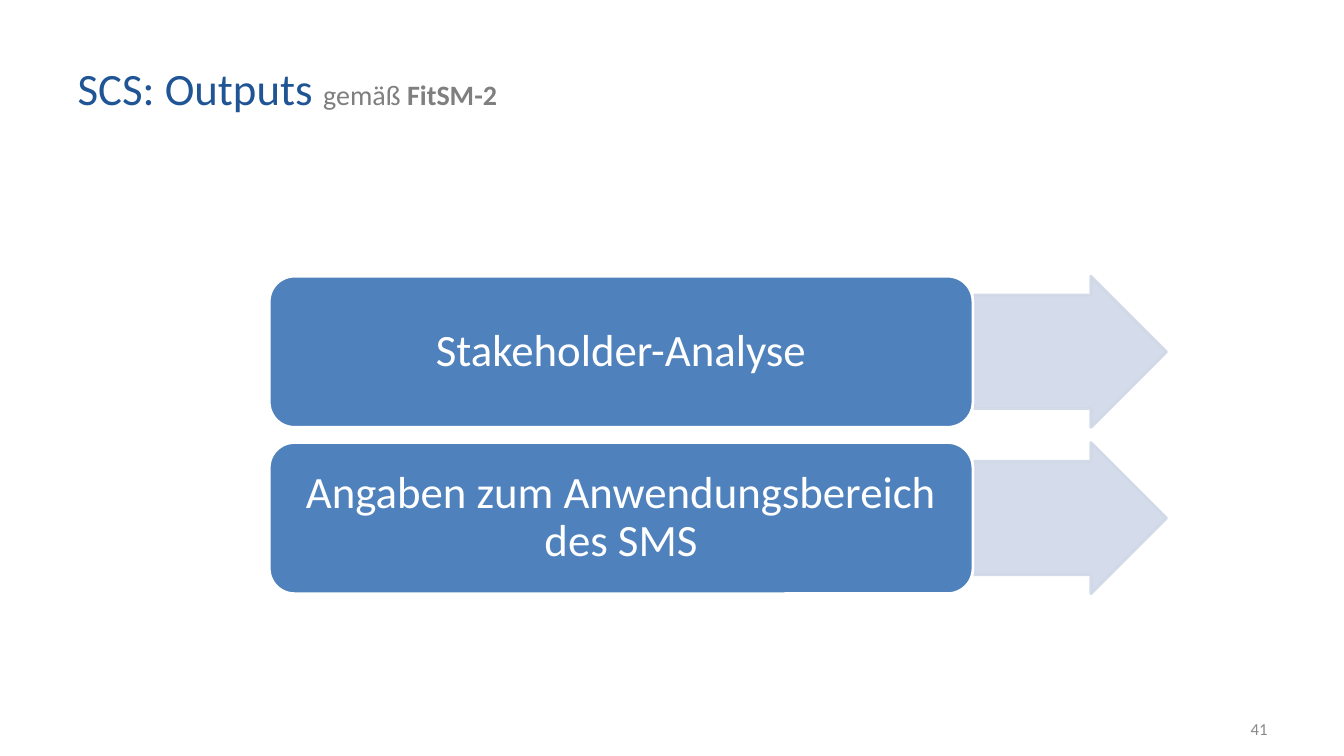
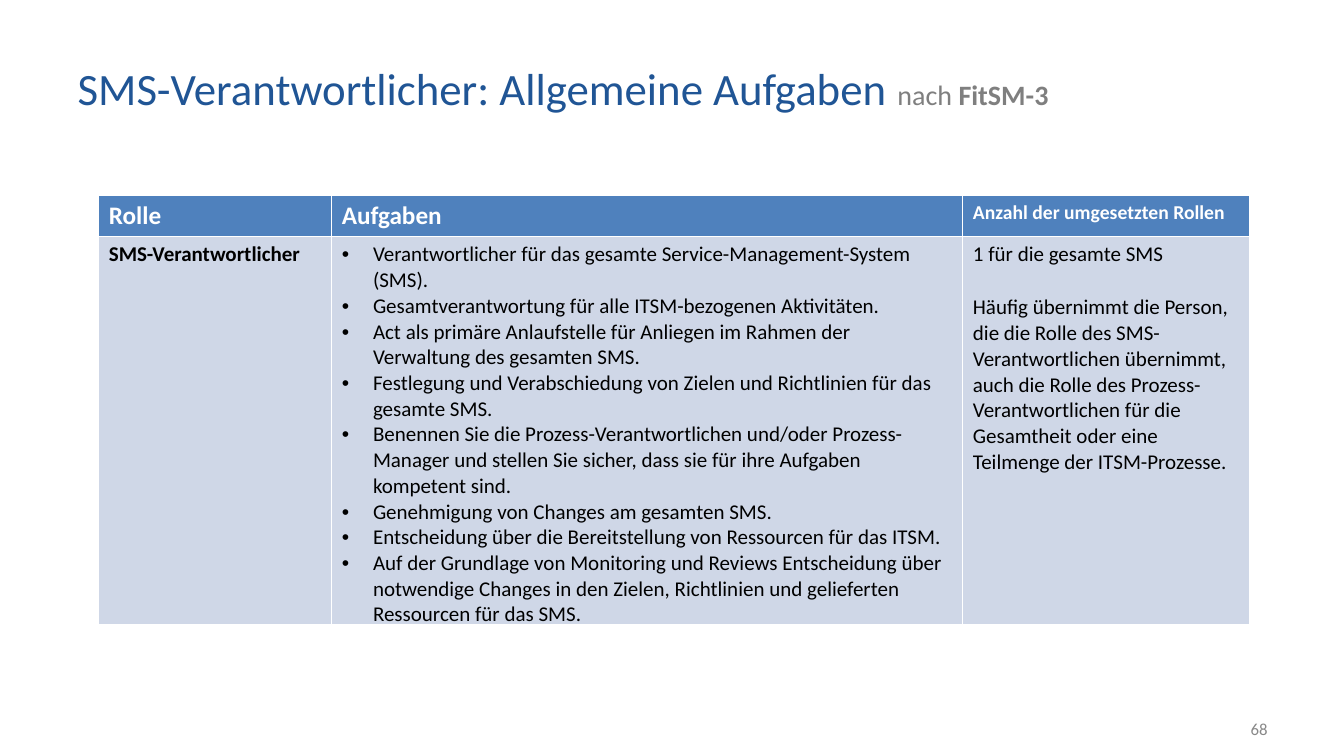
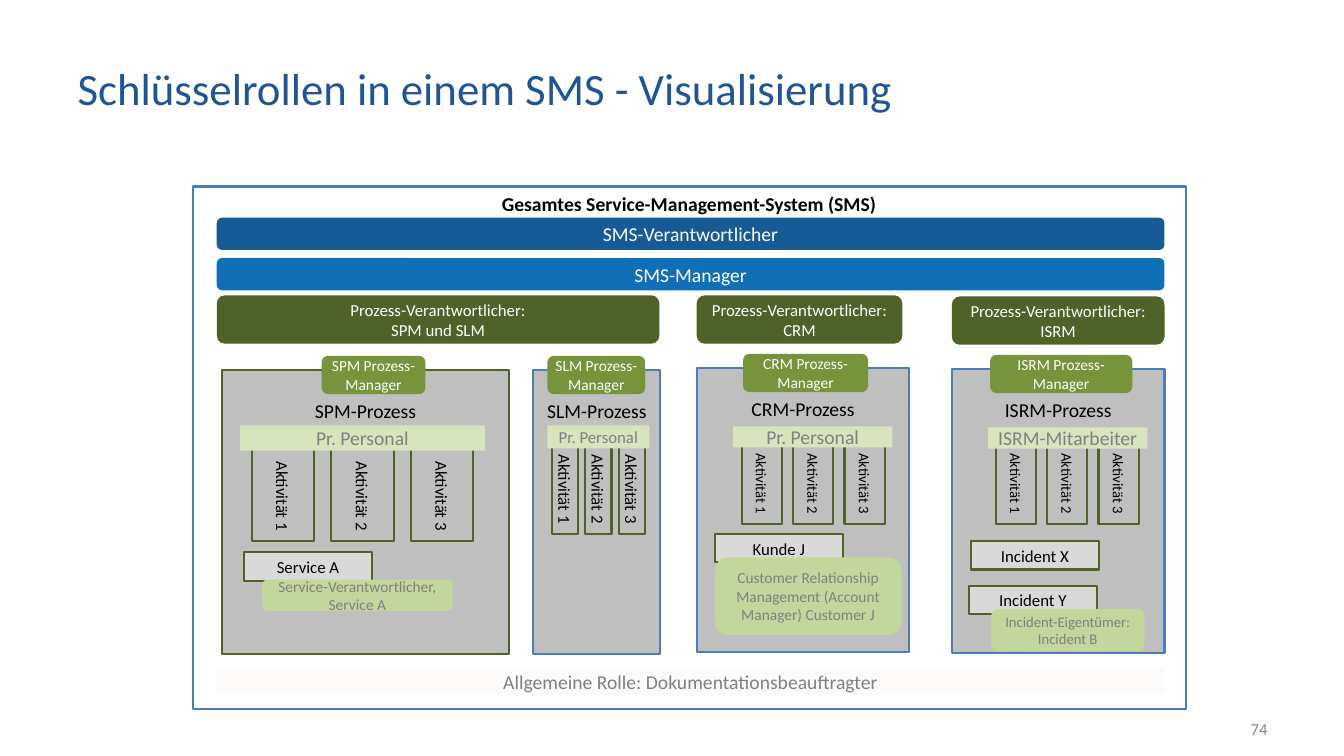
from dataclasses import dataclass, replace
from typing import NamedTuple, Optional, Union

from lxml.etree import SubElement
from pptx import Presentation
from pptx.dml.color import RGBColor
from pptx.enum.shapes import MSO_SHAPE as Preset
from pptx.enum.text import MSO_ANCHOR as Anchor, PP_ALIGN as Align
from pptx.oxml.ns import qn
from pptx.shapes.autoshape import Shape
from pptx.shapes.shapetree import GroupShapes, SlideShapes
from pptx.slide import Slide
from pptx.table import _Cell as Cell
from pptx.text.text import TextFrame, _Paragraph as Paragraph
from pptx.util import Inches, Pt

Shapes = Union[SlideShapes, GroupShapes]

FONT = "Calibri"
WHITE = RGBColor(0xFF, 0xFF, 0xFF)
BLACK = RGBColor(0x00, 0x00, 0x00)
TITLE_BLUE = RGBColor(0x20, 0x55, 0x95)
SUBTITLE_GRAY = RGBColor(0x7F, 0x7F, 0x7F)
NUMBER_GRAY = RGBColor(0x88, 0x88, 0x88)
ROLE_GRAY = RGBColor(0x80, 0x80, 0x80)
ACCENT_BLUE = RGBColor(0x4F, 0x81, 0xBD)
EDGE_BLUE = RGBColor(0x4A, 0x7D, 0xBA)
ARROW_FILL = RGBColor(0xD0, 0xD8, 0xE8)
ARROW_EDGE = RGBColor(0xD0, 0xD8, 0xE7)
ROW_BLUE = RGBColor(0xCF, 0xD7, 0xE7)
OWNER_BLUE = RGBColor(0x16, 0x5B, 0x95)
MANAGER_BLUE = RGBColor(0x0F, 0x70, 0xB7)
DARK_GREEN = RGBColor(0x4F, 0x62, 0x28)
MID_GREEN = RGBColor(0x77, 0x93, 0x3C)
SOFT_GREEN = RGBColor(0xC3, 0xD6, 0x9B)
PALE_GREEN = RGBColor(0xD7, 0xE4, 0xBD)
PROCESS_GRAY = RGBColor(0xBF, 0xBF, 0xBF)
ITEM_GRAY = RGBColor(0xD9, 0xD9, 0xD9)
GENERAL_WHITE = RGBColor(0xFC, 0xFB, 0xF9)


class Span(NamedTuple):
    text: str
    size: float
    color: RGBColor
    bold: bool = False


class Area(NamedTuple):
    left: float
    top: float
    width: float
    height: float


class Insets(NamedTuple):
    left: float = 0.1
    top: float = 0.05
    right: float = 0.1
    bottom: float = 0.05


@dataclass(frozen=True)
class Style:
    size: float
    color: RGBColor
    fill: Optional[RGBColor] = None
    edge: Optional[RGBColor] = None
    edge_width: float = 1.5
    preset: Preset = Preset.RECTANGLE
    bold: bool = False
    align: Align = Align.CENTER
    anchor: Anchor = Anchor.MIDDLE
    insets: Insets = Insets()
    line_spacing: float = 1.0


@dataclass(frozen=True)
class Label:
    area: Area
    style: Style
    lines: tuple[str, ...]


@dataclass(frozen=True)
class Activities:
    left: float
    top: float
    length: float
    thickness: float
    step: float
    size: float


@dataclass(frozen=True)
class Process:
    name: str
    left: float
    top: float
    width: float
    manager_left: float
    manager_width: float
    staff: Label
    activities: Activities
    edge: RGBColor = EDGE_BLUE


ROUNDED = Preset.ROUNDED_RECTANGLE
OUTPUT = Style(32, WHITE, ACCENT_BLUE, WHITE, 2, ROUNDED,
               insets=Insets(0.12, 0.06, 0.12, 0.06), line_spacing=0.9)
ARROW = Style(32, BLACK, ARROW_FILL, ARROW_EDGE, 2, Preset.RIGHT_ARROW)
SYSTEM = Style(14, BLACK, edge=EDGE_BLUE, bold=True, anchor=Anchor.TOP)
SMS_OWNER = Style(14, WHITE, OWNER_BLUE, preset=ROUNDED)
SMS_MANAGER = replace(SMS_OWNER, fill=MANAGER_BLUE)
GENERAL = Style(14, ROLE_GRAY, GENERAL_WHITE, preset=ROUNDED)
OWNER = Style(12, WHITE, DARK_GREEN, preset=ROUNDED)
MANAGER = Style(11, WHITE, MID_GREEN, preset=ROUNDED, insets=Insets(0.04, 0.05, 0.04, 0.05))
PROCESS = Style(14, BLACK, PROCESS_GRAY, anchor=Anchor.TOP, insets=Insets(top=0.29))
STAFF = Style(14, ROLE_GRAY, PALE_GREEN)
ACTIVITY = Style(12, BLACK, edge=DARK_GREEN, align=Align.RIGHT, insets=Insets(left=0))
ITEM = Style(12, BLACK, ITEM_GRAY, DARK_GREEN)
ITEM_ROLE = Style(11, ROLE_GRAY, SOFT_GREEN, preset=ROUNDED)

OUTPUTS = ("Stakeholder-Analyse", "Angaben zum Anwendungsbereich des SMS")
TASKS = (
    "Verantwortlicher für das gesamte Service-Management-System (SMS).",
    "Gesamtverantwortung für alle ITSM-bezogenen Aktivitäten.",
    "Act als primäre Anlaufstelle für Anliegen im Rahmen der Verwaltung des gesamten SMS.",
    "Festlegung und Verabschiedung von Zielen und Richtlinien für das gesamte SMS.",
    "Benennen Sie die Prozess-Verantwortlichen und/oder Prozess-Manager und stellen Sie sicher, "
    "dass sie für ihre Aufgaben kompetent sind.",
    "Genehmigung von Changes am gesamten SMS.",
    "Entscheidung über die Bereitstellung von Ressourcen für das ITSM.",
    "Auf der Grundlage von Monitoring und Reviews Entscheidung über notwendige Changes in den "
    "Zielen, Richtlinien und gelieferten Ressourcen für das SMS.",
)
ROLE_COUNTS = (
    "1 für die gesamte SMS",
    "Häufig übernimmt die Person, die die Rolle des SMS-Verantwortlichen übernimmt, auch die "
    "Rolle des Prozess-Verantwortlichen für die Gesamtheit oder eine Teilmenge der ITSM-Prozesse.",
)
OWNER_LINE = "Prozess-Verantwortlicher:"
SYSTEM_LABELS = (
    Label(Area(1.91, 1.85, 9.85, 5.18), SYSTEM, ("Gesamtes Service-Management-System (SMS)",)),
    Label(Area(2.15, 2.16, 9.4, 0.32), SMS_OWNER, ("SMS-Verantwortlicher",)),
    Label(Area(2.15, 2.56, 9.4, 0.32), SMS_MANAGER, ("SMS-Manager",)),
    Label(Area(2.15, 2.93, 4.39, 0.48), OWNER, (OWNER_LINE, "SPM und SLM")),
    Label(Area(6.91, 2.93, 2.04, 0.48), OWNER, (OWNER_LINE, "CRM")),
    Label(Area(9.44, 2.94, 2.11, 0.48), OWNER, (OWNER_LINE, "ISRM")),
    Label(Area(2.15, 6.63, 9.4, 0.26), GENERAL, ("Allgemeine Rolle: Dokumentationsbeauftragter",)),
)
PROCESSES = (
    Process("SPM", 2.2, 3.67, 2.85, 3.19, 1.03,
            Label(Area(2.38, 4.22, 2.43, 0.25), STAFF, ("Pr. Personal",)),
            Activities(2.31, 4.56, 0.99, 0.62, 0.79, 12), DARK_GREEN),
    Process("SLM", 5.29, 3.67, 1.26, 5.43, 0.97,
            Label(Area(5.43, 4.22, 1.01, 0.23), replace(STAFF, size=12), ("Pr. Personal",)),
            Activities(5.14, 4.7, 0.93, 0.26, 0.33, 12)),
    Process("CRM", 6.91, 3.65, 2.11, 7.37, 1.24,
            Label(Area(7.27, 4.23, 1.58, 0.21), STAFF, ("Pr. Personal",)),
            Activities(7.14, 4.58, 0.83, 0.4, 0.51, 10.5)),
    Process("ISRM", 9.44, 3.66, 2.11, 9.82, 1.41,
            Label(Area(9.8, 4.24, 1.58, 0.21), STAFF, ("ISRM-Mitarbeiter",)),
            Activities(9.66, 4.58, 0.83, 0.4, 0.51, 10.5)),
)
ITEM_LABELS = (
    Label(Area(2.42, 5.48, 1.27, 0.28), ITEM, ("Service A",)),
    Label(Area(2.6, 5.75, 1.89, 0.31), ITEM_ROLE, ("Service-Verantwortlicher, Service A",)),
    Label(Area(7.09, 5.3, 1.27, 0.28), ITEM, ("Kunde J",)),
    Label(Area(7.09, 5.53, 1.85, 0.77), ITEM_ROLE,
          ("Customer Relationship Management (Account Manager) Customer J",)),
    Label(Area(9.63, 5.37, 1.27, 0.28), ITEM, ("Incident X",)),
    Label(Area(9.61, 5.81, 1.27, 0.28), ITEM, ("Incident Y",)),
    Label(Area(9.83, 6.04, 1.52, 0.42), replace(ITEM_ROLE, size=10.5),
          ("Incident-Eigentümer: Incident B",)),
)


def to_inches(area: Area) -> tuple[Inches, ...]:
    return tuple(Inches(length) for length in area)


def add_span(para: Paragraph, span: Span) -> None:
    run = para.add_run()
    run.text = span.text
    run.font.name = FONT
    run.font.size = Pt(span.size)
    run.font.bold = span.bold
    run.font.color.rgb = span.color


def add_paragraphs(frame: TextFrame, spans: list[Span]) -> list[Paragraph]:
    for index, span in enumerate(spans):
        para = frame.add_paragraph() if index else frame.paragraphs[0]
        add_span(para, span)
    return list(frame.paragraphs)


def draw_label(shapes: Shapes, label: Label) -> Shape:
    style = label.style
    box = shapes.add_shape(style.preset, *to_inches(label.area))
    box.shadow.inherit = False
    if style.fill is None:
        box.fill.background()
    else:
        box.fill.solid()
        box.fill.fore_color.rgb = style.fill
    if style.edge is None:
        box.line.fill.background()
    else:
        box.line.color.rgb = style.edge
        box.line.width = Pt(style.edge_width)
    frame = box.text_frame
    frame.word_wrap = True
    frame.vertical_anchor = style.anchor
    frame.margin_left, frame.margin_top, frame.margin_right, frame.margin_bottom = (
        Inches(inset) for inset in style.insets)
    spans = [Span(line, style.size, style.color, style.bold) for line in label.lines]
    for para in add_paragraphs(frame, spans):
        para.alignment = style.align
        para.line_spacing = style.line_spacing
    return box


def add_page(deck: Presentation, number: int, heading: str, *details: Span) -> Slide:
    page = deck.slides.add_slide(deck.slide_layouts[5])
    title = page.shapes.title
    title.left, title.top, title.width, title.height = to_inches(Area(0.67, 0.3, 9.9, 1.14))
    title.text_frame.vertical_anchor = Anchor.MIDDLE
    para = title.text_frame.paragraphs[0]
    para.alignment = Align.LEFT
    for span in (Span(heading, 32, TITLE_BLUE), *details):
        add_span(para, span)

    number_box = page.shapes.add_textbox(*to_inches(Area(9.56, 7.03, 3.11, 0.4)))
    number_box.text_frame.word_wrap = True
    number_box.text_frame.vertical_anchor = Anchor.MIDDLE
    number_para = number_box.text_frame.paragraphs[0]
    number_para.alignment = Align.RIGHT
    add_span(number_para, Span(str(number), 12, NUMBER_GRAY))
    return page


def standard_spans(preposition: str, standard: str) -> tuple[Span, Span]:
    return (Span(f"{preposition} ", 20, SUBTITLE_GRAY),
            Span(standard, 20, SUBTITLE_GRAY, True))


def set_opacity(shape: Shape, percent: int) -> None:
    for color in shape.element.spPr.iter(qn("a:srgbClr")):
        SubElement(color, qn("a:alpha")).set("val", str(percent * 1000))


def draw_outputs(page: Slide) -> None:
    for index, text in enumerate(OUTPUTS):
        top = 2.74 + index * 1.65
        arrow = draw_label(page.shapes, Label(Area(9.66, top, 1.91, 1.5), ARROW, ()))
        arrow.adjustments[0] = 0.75
        arrow.adjustments[1] = 0.5
        set_opacity(arrow, 90)
        draw_label(page.shapes, Label(Area(2.67, top, 6.98, 1.5), OUTPUT, (text,)))


def style_cell(cell: Cell, fill: RGBColor) -> None:
    cell.fill.solid()
    cell.fill.fore_color.rgb = fill
    properties = cell._tc.get_or_add_tcPr()
    for index, side in enumerate(("lnL", "lnR", "lnT", "lnB")):
        border = SubElement(properties, qn(f"a:{side}"))
        border.set("w", str(Pt(0.96)))
        color = SubElement(SubElement(border, qn("a:solidFill")), qn("a:srgbClr"))
        color.set("val", str(WHITE))
        properties.insert(index, border)


def add_bullet(para: Paragraph) -> None:
    properties = para._p.get_or_add_pPr()
    properties.set("marL", str(Inches(0.31)))
    properties.set("indent", str(-Inches(0.31)))
    bullet_color = SubElement(properties, qn("a:buClr"))
    SubElement(bullet_color, qn("a:srgbClr")).set("val", str(BLACK))
    SubElement(properties, qn("a:buFont")).set("typeface", "Arial")
    SubElement(properties, qn("a:buChar")).set("char", "•")


def draw_roles(page: Slide) -> None:
    table = page.shapes.add_table(2, 3, *to_inches(Area(0.98, 1.94, 11.41, 4.26))).table
    for column, width in zip(table.columns, (2.31, 6.26, 2.84)):
        column.width = Inches(width)
    for row, height in zip(table.rows, (0.41, 3.85)):
        row.height = Inches(height)
    header = [[Span("Rolle", 18, WHITE, True)],
              [Span("Aufgaben", 18, WHITE, True)],
              [Span("Anzahl der umgesetzten Rollen", 14, WHITE, True)]]
    body = [[Span("SMS-Verantwortlicher", 15, BLACK, True)],
            [Span(task, 15, BLACK) for task in TASKS],
            [Span(count, 15, BLACK) for count in ROLE_COUNTS]]
    for row, contents, fill in zip(table.rows, (header, body), (ACCENT_BLUE, ROW_BLUE)):
        for cell, spans in zip(row.cells, contents):
            style_cell(cell, fill)
            add_paragraphs(cell.text_frame, spans)
    for para in table.cell(1, 1).text_frame.paragraphs:
        add_bullet(para)
    table.cell(1, 2).text_frame.paragraphs[1].space_before = Pt(19.5)


def draw_process(page: Slide, process: Process) -> None:
    draw_label(page.shapes, Label(Area(process.left, process.top, process.width, 2.82),
                                  replace(PROCESS, edge=process.edge),
                                  (f"{process.name}-Prozess",)))
    draw_label(page.shapes, Label(
        Area(process.manager_left, process.top - 0.14, process.manager_width, 0.38),
        MANAGER, (f"{process.name} Prozess-Manager",)))
    team = page.shapes.add_group_shape()
    row = process.activities
    for index in range(3):
        area = Area(row.left + index * row.step, row.top, row.length, row.thickness)
        activity = draw_label(team.shapes, Label(area, replace(ACTIVITY, size=row.size),
                                                 (f"Aktivität {index + 1}",)))
        activity.rotation = 90
    draw_label(team.shapes, process.staff)


def draw_system(page: Slide) -> None:
    for label in SYSTEM_LABELS:
        draw_label(page.shapes, label)
    for process in PROCESSES:
        draw_process(page, process)
    for label in ITEM_LABELS:
        draw_label(page.shapes, label)


def main() -> None:
    deck = Presentation()
    deck.slide_width = Inches(13.33)
    deck.slide_height = Inches(7.5)
    draw_outputs(add_page(deck, 41, "SCS: Outputs ", *standard_spans("gemäß", "FitSM-2")))
    draw_roles(add_page(deck, 68, "SMS-Verantwortlicher: Allgemeine Aufgaben ",
                        *standard_spans("nach", "FitSM-3")))
    draw_system(add_page(deck, 74, "Schlüsselrollen in einem SMS - Visualisierung"))
    deck.save("out.pptx")


if __name__ == "__main__":
    main()
